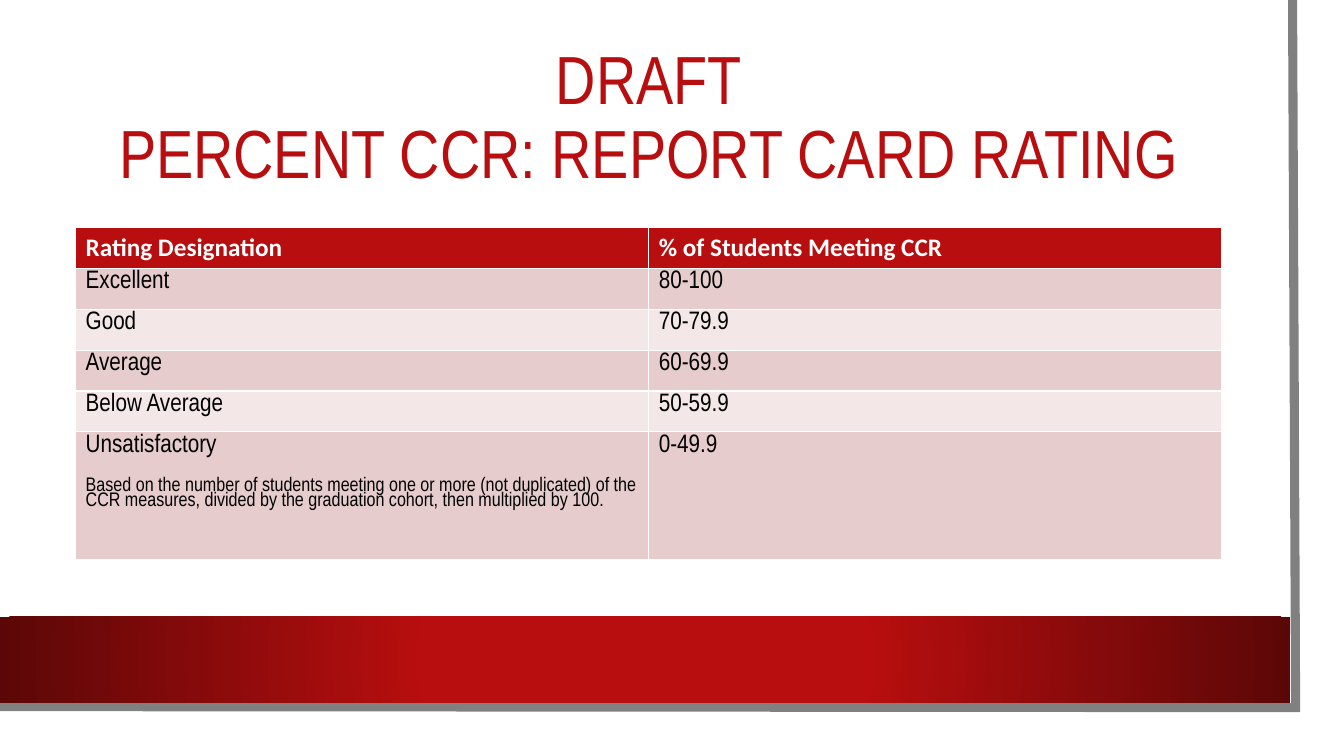
from dataclasses import dataclass

from lxml import etree
from pptx import Presentation
from pptx.dml.color import RGBColor
from pptx.enum import text as t
from pptx.enum.shapes import MSO_SHAPE
from pptx.oxml import ns
from pptx.util import Inches, Pt

RED = RGBColor(0xB8, 0x0E, 0x0F)
DARK_RED = RGBColor(0x5C, 0x07, 0x07)
ROSE = RGBColor(0xE6, 0xCC, 0xCC)
PALE_ROSE = RGBColor(0xF3, 0xE7, 0xE7)
GRAY = RGBColor(0x80, 0x80, 0x80)
WHITE = RGBColor(0xFF, 0xFF, 0xFF)
BLACK = RGBColor(0x00, 0x00, 0x00)
NARROW = "Arial Narrow"
ROW_HEIGHT = 0.405
LAST_ROW_HEIGHT = 1.27


@dataclass(frozen=True)
class Rating:
    designation: str
    percent: str
    note: str = ""


HEADING = Rating("Rating Designation", "% of Students Meeting CCR")
RATINGS = [
    Rating("Excellent", "80-100"),
    Rating("Good", "70-79.9"),
    Rating("Average", "60-69.9"),
    Rating("Below Average", "50-59.9"),
    Rating(
        "Unsatisfactory",
        "0-49.9",
        "Based on the number of students meeting one or more (not duplicated) of the "
        "CCR measures, divided by the graduation cohort, then multiplied by 100.",
    ),
]


def write(paragraph, text: str, *, size: float = 18, font: str = NARROW,
          color: RGBColor = BLACK, bold: bool = False, spacing: float = 0.8,
          before: float = 0, align=t.PP_ALIGN.LEFT) -> None:
    paragraph.text = text
    paragraph.alignment = align
    paragraph.line_spacing = spacing
    paragraph.space_before = Pt(before)
    paragraph.font.size = Pt(size)
    paragraph.font.name = font
    paragraph.font.bold = bold
    paragraph.font.color.rgb = color


def draw_frame(slide) -> None:
    builder = slide.shapes.build_freeform(Inches(12.82), 0)
    builder.add_line_segments(
        [(Inches(12.85), Inches(7.02)), (0, Inches(7.01))], close=False)
    edge = builder.convert_to_shape()
    edge.shadow.inherit = False
    edge.fill.background()
    edge.line.color.rgb = GRAY
    edge.line.width = Pt(6.5)
    etree.SubElement(edge.line._get_or_add_ln(), ns.qn("a:miter"), lim="800000")


def draw_band(slide) -> None:
    band = slide.shapes.add_shape(
        MSO_SHAPE.RECTANGLE, 0, Inches(6.12), Inches(12.8), Inches(0.85))
    band.shadow.inherit = False
    band.line.fill.background()
    band.fill.gradient()
    for stop, position, color in zip(
            band.fill.gradient_stops, (0.34, 1), (RED, DARK_RED)):
        stop.position = position
        stop.color.rgb = color
    linear = band._element.spPr.find(".//" + ns.qn("a:lin"))
    radial = etree.Element(ns.qn("a:path"), path="circle")
    etree.SubElement(radial, ns.qn("a:fillToRect"),
                     l="50000", t="50000", r="50000", b="50000")
    linear.getparent().replace(linear, radial)


def draw_title(slide) -> None:
    title = slide.shapes.title
    title.left, title.top = Inches(0.75), Inches(0.36)
    title.width, title.height = Inches(11.37), Inches(1.65)
    frame = title.text_frame
    frame.word_wrap = True
    frame.auto_size = t.MSO_AUTO_SIZE.NONE
    frame.vertical_anchor = t.MSO_ANCHOR.MIDDLE
    write(frame.paragraphs[0], "DRAFT\vPERCENT CCR: REPORT CARD RATING",
          size=48.6, color=RED, spacing=0.9, align=t.PP_ALIGN.CENTER)


def fill_row(cells, rating: Rating, fill: RGBColor, **text_format) -> None:
    for cell, value in zip(cells, (rating.designation, rating.percent)):
        cell.fill.solid()
        cell.fill.fore_color.rgb = fill
        write(cell.text_frame.paragraphs[0], value, **text_format)
    if rating.note:
        write(cells[0].text_frame.add_paragraph(), rating.note, size=14, before=17)


def draw_ratings(slide) -> None:
    table = slide.shapes.add_table(
        len(RATINGS) + 1, 2, Inches(0.75), Inches(2.26), Inches(11.37),
        Inches(ROW_HEIGHT * len(RATINGS) + LAST_ROW_HEIGHT)).table
    rows = list(table.rows)
    for row in rows[:-1]:
        row.height = Inches(ROW_HEIGHT)
    rows[-1].height = Inches(LAST_ROW_HEIGHT)
    fill_row(rows[0].cells, HEADING, RED,
             font="Calibri", color=WHITE, bold=True, spacing=1.0)
    for index, (row, rating) in enumerate(zip(rows[1:], RATINGS)):
        fill_row(row.cells, rating, PALE_ROSE if index % 2 else ROSE)


def main() -> None:
    deck = Presentation()
    deck.slide_width, deck.slide_height = Inches(13.33), Inches(7.5)
    slide = deck.slides.add_slide(deck.slide_layouts[5])
    draw_frame(slide)
    draw_band(slide)
    draw_title(slide)
    draw_ratings(slide)
    deck.save("out.pptx")


if __name__ == "__main__":
    main()
